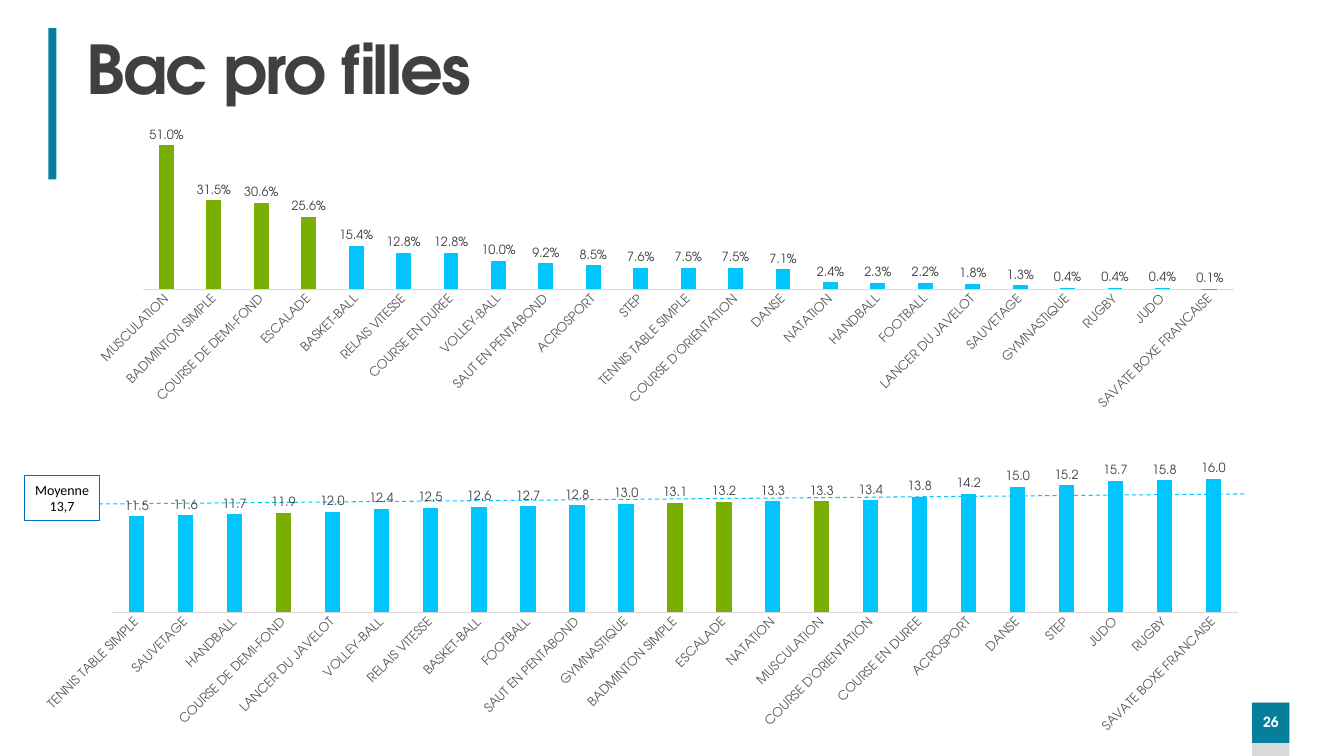
from lxml.etree import SubElement
from pptx import Presentation
from pptx.chart.data import CategoryChartData
from pptx.dml.color import RGBColor
from pptx.enum.chart import XL_CHART_TYPE, XL_LABEL_POSITION, XL_TICK_MARK
from pptx.enum.dml import MSO_LINE
from pptx.enum.shapes import MSO_CONNECTOR, MSO_SHAPE
from pptx.enum.text import MSO_ANCHOR, MSO_AUTO_SIZE, PP_ALIGN
from pptx.oxml import parse_xml
from pptx.oxml.ns import nsdecls, qn
from pptx.util import Pt

EMU_PER_PX = 9144  # 100 px to the inch
FONT = "TeX Gyre Adventor"
COLORS = {
    "teal": "067F9C", "grey": "D9D9D9", "white": "FFFFFF", "black": "000000",
    "title": "404040", "axis": "595959", "bar": "01C6FD", "top": "79AE02",
    "frame": "0070C0",
}
TOP_SPORTS = {"MUSCULATION", "BADMINTON SIMPLE", "COURSE DE DEMI-FOND", "ESCALADE"}

PARTICIPATION = {
    "MUSCULATION": 0.51, "BADMINTON SIMPLE": 0.315, "COURSE DE DEMI-FOND": 0.306,
    "ESCALADE": 0.256, "BASKET-BALL": 0.154, "RELAIS VITESSE": 0.128,
    "COURSE EN DUREE": 0.128, "VOLLEY-BALL": 0.1, "SAUT EN PENTABOND": 0.092,
    "ACROSPORT": 0.085, "STEP": 0.076, "TENNIS TABLE SIMPLE": 0.075,
    "COURSE D'ORIENTATION": 0.075, "DANSE": 0.071, "NATATION": 0.024,
    "HANDBALL": 0.023, "FOOTBALL": 0.022, "LANCER DU JAVELOT": 0.018,
    "SAUVETAGE": 0.013, "GYMNASTIQUE": 0.004, "RUGBY": 0.004, "JUDO": 0.004,
    "SAVATE BOXE FRANCAISE": 0.001,
}
MARKS = {
    "TENNIS TABLE SIMPLE": 11.5, "SAUVETAGE": 11.6, "HANDBALL": 11.7,
    "COURSE DE DEMI-FOND": 11.9, "LANCER DU JAVELOT": 12, "VOLLEY-BALL": 12.4,
    "RELAIS VITESSE": 12.5, "BASKET-BALL": 12.6, "FOOTBALL": 12.7,
    "SAUT EN PENTABOND": 12.8, "GYMNASTIQUE": 13, "BADMINTON SIMPLE": 13.1,
    "ESCALADE": 13.2, "NATATION": 13.3, "MUSCULATION": 13.3,
    "COURSE D'ORIENTATION": 13.4, "COURSE EN DUREE": 13.8, "ACROSPORT": 14.2,
    "DANSE": 15, "STEP": 15.2, "JUDO": 15.7, "RUGBY": 15.8,
    "SAVATE BOXE FRANCAISE": 16,
}


def px(*lengths):
    return [length * EMU_PER_PX for length in lengths]


def color(name):
    return RGBColor.from_string(COLORS[name])


def style_font(font, size, ink, name=FONT, bold=False):
    font.size, font.name, font.bold = Pt(size), name, bold
    font.color.rgb = color(ink)


def write(shape, text, size=10, ink="black", font=FONT, bold=False,
          align=PP_ALIGN.CENTER, line_spacing=None, tracking=None, margins=(0, 5)):
    """Put one formatted paragraph in a shape; margins are (sides, top and bottom)."""
    frame = shape.text_frame
    frame.word_wrap, frame.auto_size = True, MSO_AUTO_SIZE.NONE
    frame.vertical_anchor = MSO_ANCHOR.MIDDLE
    side, edge = px(*margins)
    frame.margin_left = frame.margin_right = side
    frame.margin_top = frame.margin_bottom = edge
    paragraph = frame.paragraphs[0]
    paragraph.alignment = align
    if line_spacing:
        paragraph.line_spacing = line_spacing
    run = paragraph.add_run()
    run.text = text
    style_font(run.font, size, ink, font, bold)
    if tracking:
        run.font._element.set("spc", str(tracking))


def add_block(slide, box, fill=None, line=None):
    block = slide.shapes.add_shape(MSO_SHAPE.RECTANGLE, *px(*box))
    block.shadow.inherit = False
    if fill:
        block.fill.solid()
        block.fill.fore_color.rgb = color(fill)
    else:
        block.fill.background()
    if line:
        block.line.color.rgb = color(line)
        block.line.width = Pt(0.75)
    else:
        block.line.fill.background()
    return block


def add_heading(slide, box, text):
    left, top, width, height = box
    add_block(slide, (left, top, 8, 150), "teal")
    title = slide.shapes.title
    title.left, title.top, title.width, title.height = px(left + 28, top + 3, width - 28, height)
    write(title, text, size=48, ink="title", bold=True, align=PP_ALIGN.LEFT,
          line_spacing=0.9, tracking=-150, margins=(10, 5))


def add_page_number(slide, box, number):
    left, top, width, height = box
    add_block(slide, box, "grey")
    badge = add_block(slide, (left, top, width, height - 13), "teal")
    write(badge, number, ink="white", bold=True, line_spacing=0.9)


def add_average(slide, box, text, line_end):
    """Add the average's framed label and the dashed line that leaves its right side."""
    left, top, width, height = box
    line = slide.shapes.add_connector(
        MSO_CONNECTOR.STRAIGHT, *px(left + width - 1, top + 28, *line_end))
    line.line.color.rgb = color("bar")
    line.line.width = Pt(0.75)
    line.line.dash_style = MSO_LINE.DASH
    SubElement(line._element.spPr, qn("a:effectLst"))
    label = add_block(slide, box, line="frame")
    write(label, text, font="Calibri", margins=(8, 5))


def set_plot_area(chart, plot):
    """Fix the inner plot area, given as fractions of the chart (x, y, w, h)."""
    area = chart._chartSpace.chart.plotArea
    for old in area.findall(qn("c:layout")):
        area.remove(old)
    sizes = "".join(f'<c:{key} val="{value}"/>' for key, value in zip("xywh", plot))
    area.insert(0, parse_xml(
        f'<c:layout {nsdecls("c")}><c:manualLayout><c:layoutTarget val="inner"/>'
        f'<c:xMode val="edge"/><c:yMode val="edge"/>{sizes}</c:manualLayout></c:layout>'))


def add_sport_chart(slide, box, values, number_format, maximum, plot):
    data = CategoryChartData(number_format=number_format)
    data.categories = list(values)
    data.add_series("Series 1", list(values.values()))
    chart = slide.shapes.add_chart(
        XL_CHART_TYPE.COLUMN_CLUSTERED, *px(*box), data).chart
    chart.has_title = chart.has_legend = False
    style_font(chart.font, 10, "black")
    set_plot_area(chart, plot)

    scale = chart.value_axis
    scale.visible = scale.has_major_gridlines = False
    scale.minimum_scale, scale.maximum_scale = 0, maximum
    sports = chart.category_axis
    sports.major_tick_mark = sports.minor_tick_mark = XL_TICK_MARK.NONE
    sports.format.line.color.rgb = color("grey")
    sports.format.line.width = Pt(0.75)
    style_font(sports.tick_labels.font, 9, "axis")
    sports._element.find(qn("c:txPr")).find(qn("a:bodyPr")).set("rot", "-2700000")

    bars = chart.plots[0]
    bars.gap_width, bars.overlap, bars.vary_by_categories = 219, -27, False
    series = bars.series[0]
    series.format.fill.solid()
    series.format.fill.fore_color.rgb = color("bar")
    for index, sport in enumerate(values):
        if sport in TOP_SPORTS:
            fill = series.points[index].format.fill
            fill.solid()
            fill.fore_color.rgb = color("top")
    labels = series.data_labels
    labels.show_value, labels.position = True, XL_LABEL_POSITION.OUTSIDE_END
    labels.number_format, labels.number_format_is_linked = number_format, False
    style_font(labels.font, 9, "title")


def main():
    deck = Presentation()
    deck.slide_width, deck.slide_height = px(1333, 750)
    slide = deck.slides.add_slide(deck.slide_layouts.get_by_name("Title Only"))
    add_heading(slide, (48, 28, 1199, 82), "Bac pro filles")
    add_page_number(slide, (1242, 697, 37, 53), "26")
    add_sport_chart(slide, (76, 112, 1171, 300), PARTICIPATION, "0.0%", 0.6,
                    (0.056, 0.023, 0.924, 0.56))
    add_average(slide, (24, 472, 75, 44), "Moyenne 13,7", (1235, 490))
    add_sport_chart(slide, (40, 436, 1207, 300), MARKS, "0.0", 18,
                    (0.059, 0.074, 0.925, 0.498))
    deck.save("out.pptx")


if __name__ == "__main__":
    main()
